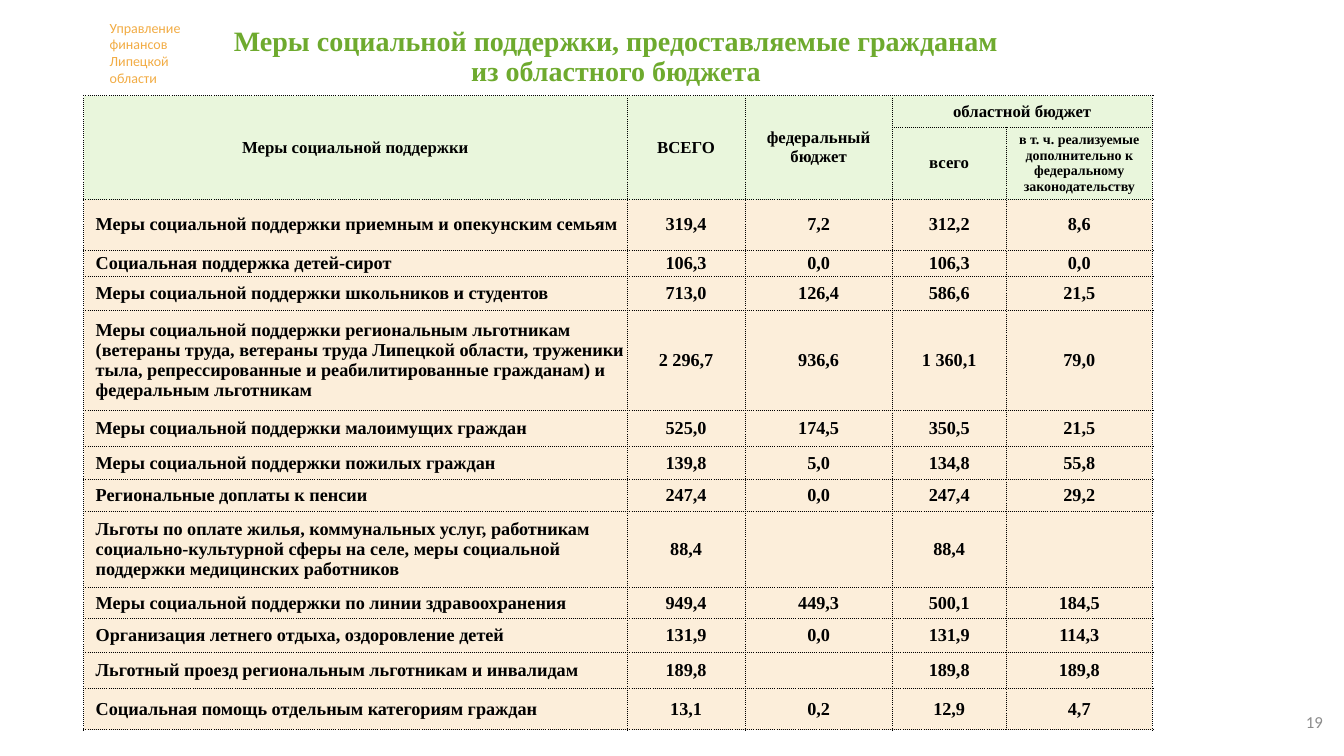
from lxml.etree import SubElement
from pptx import Presentation
from pptx.dml.color import RGBColor
from pptx.enum.text import MSO_ANCHOR, MSO_AUTO_SIZE, PP_ALIGN
from pptx.oxml.ns import qn
from pptx.util import Emu, Pt

PX = 9144
COLORS = {
    "title": "6EAA2E", "agency": "F2AC44", "number": "8C8C8C",
    "text": "000000", "border": "000000", "head": "E9F6DC", "body": "FCEEDA",
}
SERIF, SANS = "Times New Roman", "Calibri"


def write(frame, text, size, color, font, bold, align):
    para = frame.paragraphs[0]
    para.alignment = align
    span = para.add_run()
    span.text = text
    span.font.size = Pt(size)
    span.font.name = font
    span.font.bold = bold
    span.font.color.rgb = RGBColor.from_string(COLORS[color])
    return para


def style_cell(cell, fill):
    cell.margin_left = cell.margin_right = cell.margin_top = cell.margin_bottom = 0
    cell.vertical_anchor = MSO_ANCHOR.MIDDLE
    properties = cell._tc.get_or_add_tcPr()
    for side in ("a:lnL", "a:lnR", "a:lnT", "a:lnB"):
        line = SubElement(properties, qn(side), w=str(Pt(0.5)))
        paint = SubElement(line, qn("a:solidFill"))
        SubElement(paint, qn("a:srgbClr"), val=COLORS["border"])
        SubElement(line, qn("a:prstDash"), val="sysDot")
    cell.fill.solid()
    cell.fill.fore_color.rgb = RGBColor.from_string(COLORS[fill])


deck = Presentation()
deck.slide_width, deck.slide_height = Emu(1333 * PX), Emu(750 * PX)
page = deck.slides.add_slide(deck.slide_layouts[5])

title = page.shapes.title
title.left, title.top, title.width, title.height = [Emu(v * PX) for v in (210, 25, 802, 64)]
title.text_frame.word_wrap = True
title.text_frame.auto_size = MSO_AUTO_SIZE.NONE
title.text_frame.vertical_anchor = MSO_ANCHOR.MIDDLE
heading = write(title.text_frame,
                "Меры социальной поддержки, предоставляемые гражданам из областного бюджета",
                20, "title", SERIF, True, PP_ALIGN.CENTER)
heading.line_spacing = 0.9

agency = page.shapes.add_textbox(*[Emu(v * PX) for v in (99, 14, 97, 77)]).text_frame
agency.word_wrap = True
agency.auto_size = MSO_AUTO_SIZE.SHAPE_TO_FIT_TEXT
write(agency, "Управление финансов Липецкой области", 10, "agency", SANS, False, PP_ALIGN.LEFT)

number = page.shapes.add_textbox(*[Emu(v * PX) for v in (1011, 696, 311, 40)]).text_frame
number.word_wrap = True
number.vertical_anchor = MSO_ANCHOR.MIDDLE
write(number, "19", 12, "number", SANS, False, PP_ALIGN.RIGHT)

column_widths = [539, 117, 146, 113, 145]
header_heights = [31, 72]
headers = [
    (0, 0, 1, 0, "Меры социальной поддержки", 12),
    (0, 1, 1, 1, "ВСЕГО", 12),
    (0, 2, 1, 2, "федеральный бюджет", 12),
    (0, 3, 0, 4, "областной бюджет", 12),
    (1, 3, 1, 3, "всего", 12),
    (1, 4, 1, 4, "в т. ч. реализуемые дополнительно к федеральному законодательству", 10),
]
measures = [
    (50, "Меры социальной поддержки приемным и опекунским семьям", "319,4", "7,2", "312,2", "8,6"),
    (26, "Социальная поддержка детей-сирот", "106,3", "0,0", "106,3", "0,0"),
    (34, "Меры социальной поддержки школьников и студентов", "713,0", "126,4", "586,6", "21,5"),
    (99, "Меры социальной поддержки региональным льготникам (ветераны труда, ветераны труда "
         "Липецкой области, труженики тыла, репрессированные и реабилитированные гражданам) "
         "и федеральным льготникам", "2 296,7", "936,6", "1 360,1", "79,0"),
    (36, "Меры социальной поддержки малоимущих граждан", "525,0", "174,5", "350,5", "21,5"),
    (33, "Меры социальной поддержки пожилых граждан", "139,8", "5,0", "134,8", "55,8"),
    (31, "Региональные доплаты к пенсии", "247,4", "0,0", "247,4", "29,2"),
    (76, "Льготы по оплате жилья, коммунальных услуг, работникам социально-культурной сферы "
         "на селе, меры социальной поддержки медицинских работников", "88,4", "", "88,4", ""),
    (31, "Меры социальной поддержки по линии здравоохранения", "949,4", "449,3", "500,1", "184,5"),
    (33, "Организация летнего отдыха, оздоровление детей", "131,9", "0,0", "131,9", "114,3"),
    (36, "Льготный проезд региональным льготникам и инвалидам", "189,8", "", "189,8", "189,8"),
    (41, "Социальная помощь отдельным категориям граждан", "13,1", "0,2", "12,9", "4,7"),
]
row_heights = header_heights + [measure[0] for measure in measures]

table = page.shapes.add_table(
    len(row_heights), len(column_widths),
    *[Emu(v * PX) for v in (83, 95, sum(column_widths), sum(row_heights))]).table
table.first_row = table.horz_banding = False
for column, width in zip(table.columns, column_widths):
    column.width = Emu(width * PX)
for index, (row, height) in enumerate(zip(table.rows, row_heights)):
    row.height = Emu(height * PX)
    for cell in row.cells:
        style_cell(cell, "head" if index < len(header_heights) else "body")

for top, left, bottom, right, label, size in headers:
    cell = table.cell(top, left)
    if (top, left) != (bottom, right):
        cell.merge(table.cell(bottom, right))
    write(cell.text_frame, label, size, "text", SERIF, True, PP_ALIGN.CENTER)

for row, (height, *values) in enumerate(measures, len(header_heights)):
    table.cell(row, 0).margin_left = Emu(12 * PX)
    for column, value in enumerate(values):
        if value:
            write(table.cell(row, column).text_frame, value, 13, "text", SERIF, True,
                  PP_ALIGN.CENTER if column else PP_ALIGN.LEFT)

deck.save("out.pptx")
